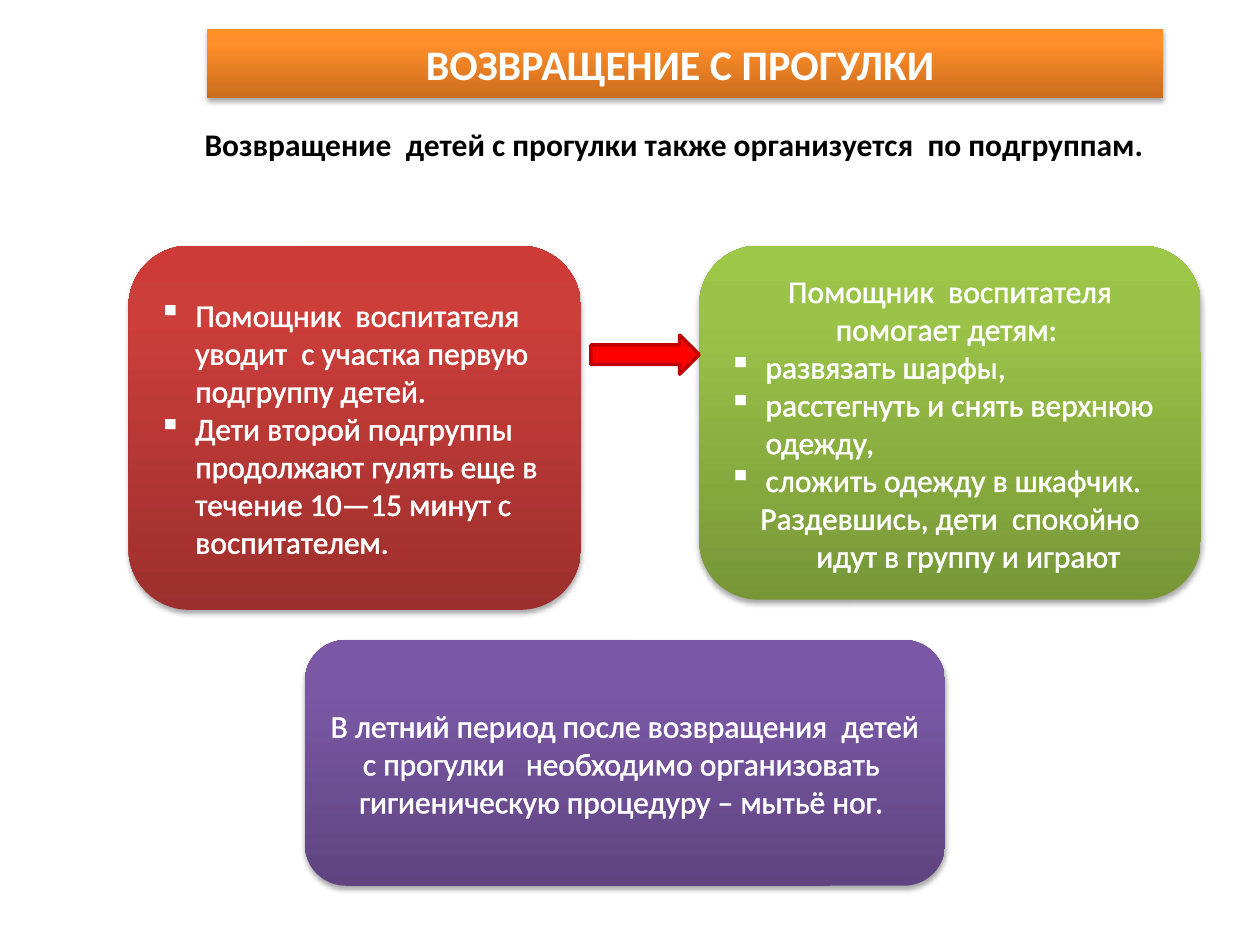
from copy import deepcopy
from dataclasses import dataclass

from lxml.etree import SubElement
from pptx import Presentation
from pptx.dml.color import RGBColor
from pptx.enum.shapes import MSO_SHAPE as Shape
from pptx.enum.text import MSO_ANCHOR as Anchor, MSO_AUTO_SIZE as AutoSize, PP_ALIGN as Align
from pptx.oxml.ns import qn
from pptx.util import Inches, Pt

COLS, ROWS = 100, 75


@dataclass(frozen=True)
class Theme:
    font: str = "Calibri"
    title_size: int = 24
    text_size: int = 18
    light: str = "FFFFFF"
    dark: str = "000000"
    orange: tuple = ("CB6C1D", "FF8F2A", "FF8F26")
    red: tuple = ("9C2F2D", "CB3E3A", "CE3B37")
    green: tuple = ("779737", "9BC348", "9DC746")
    purple: tuple = ("5F4480", "7B58A6", "7C57A8")
    arrow_fill: str = "FF0000"
    arrow_line: str = "C00000"


THEME = Theme()


def rgb(value):
    return RGBColor.from_string(value)


def write(p, text, *, size=THEME.text_size, color=THEME.light, bold=False,
          align=Align.LEFT, indent=0, hanging=0, bullet=None, outline=False):
    p.alignment = align
    pPr = p._p.get_or_add_pPr()
    pPr.set("marL", str(Inches(indent)))
    pPr.set("indent", str(Inches(-hanging)))
    if bullet:
        SubElement(pPr, qn("a:buChar")).set("char", bullet)
    r = p.add_run()
    r.text = text
    r.font.name, r.font.size, r.font.bold = THEME.font, Pt(size), bold
    r.font.color.rgb = rgb(color)
    if outline:
        rPr = r.font._element
        ln = SubElement(rPr, qn("a:ln"), w=str(Pt(0.75)))
        fill = SubElement(ln, qn("a:solidFill"))
        SubElement(fill, qn("a:srgbClr"), val=color)
        rPr.insert(0, ln)


class SlideBuilder:
    def __init__(self, prs, theme):
        self.theme = theme
        self.width, self.height = prs.slide_width, prs.slide_height
        self.s = prs.slides.add_slide(prs.slide_layouts[5])

    def box(self, col, row, cols, rows):
        dx, dy = self.width / COLS, self.height / ROWS
        return [round(v) for v in (col * dx, row * dy, cols * dx, rows * dy)]

    def paint(self, sp, colors):
        sp.fill.gradient()
        stops = sp._element.spPr.find(qn("a:gradFill")).find(qn("a:gsLst"))
        stops.append(deepcopy(stops[-1]))
        for stop, position, color in zip(sp.fill.gradient_stops, (0, 0.8, 1), colors):
            stop.position = position
            stop.color.rgb = rgb(color)
        sp.fill.gradient_angle = 90
        sp.line.fill.background()
        sp.shadow.inherit = False
        effects = sp._element.spPr.find(qn("a:effectLst"))
        shadow = SubElement(effects, qn("a:outerShdw"), blurRad=str(Pt(3.1)),
                            dist=str(Pt(1.8)), dir="5400000", rotWithShape="0")
        color = SubElement(shadow, qn("a:srgbClr"), val=self.theme.dark)
        SubElement(color, qn("a:alpha"), val="35000")

    def title(self, place, text):
        sp = self.s.shapes.title
        sp.left, sp.top, sp.width, sp.height = self.box(*place)
        self.paint(sp, self.theme.orange)
        sp.text_frame.vertical_anchor = Anchor.MIDDLE
        write(sp.text_frame.paragraphs[0], text, size=self.theme.title_size,
              bold=True, align=Align.CENTER)

    def caption(self, place, text):
        tf = self.s.shapes.add_textbox(*self.box(*place)).text_frame
        tf.word_wrap = True
        tf.auto_size = AutoSize.SHAPE_TO_FIT_TEXT
        write(tf.paragraphs[0], text, color=self.theme.dark, bold=True,
              align=Align.CENTER, indent=1)

    def card(self, place, colors, paragraphs):
        sp = self.s.shapes.add_shape(Shape.ROUNDED_RECTANGLE, *self.box(*place))
        self.paint(sp, colors)
        tf = sp.text_frame
        tf.word_wrap = True
        tf.vertical_anchor = Anchor.MIDDLE
        for i, (text, style) in enumerate(paragraphs):
            p = tf.add_paragraph() if i else tf.paragraphs[0]
            write(p, text, outline=True, **style)

    def arrow(self, place):
        sp = self.s.shapes.add_shape(Shape.RIGHT_ARROW, *self.box(*place))
        sp.fill.solid()
        sp.fill.fore_color.rgb = rgb(self.theme.arrow_fill)
        sp.line.color.rgb = rgb(self.theme.arrow_line)
        sp.line.width = Pt(2)
        sp.shadow.inherit = False


def main():
    prs = Presentation()
    prs.slide_width, prs.slide_height = Inches(10), Inches(7.5)
    slide = SlideBuilder(prs, THEME)
    hang = dict(indent=0.29, hanging=0.29)
    item = dict(hang, bullet="▪")
    center = dict(align=Align.CENTER)

    slide.title((16.4, 2.3, 75.9, 5.5), "ВОЗВРАЩЕНИЕ С ПРОГУЛКИ ")
    slide.card((10.2, 19.5, 35.9, 28.9), THEME.red, [
        ("Помощник  воспитателя уводит  с участка первую подгруппу детей.", item),
        ("Дети второй подгруппы продолжают гулять еще в течение 10—15 минут с воспитателем.", item),
    ])
    slide.card((55.5, 19.5, 39.8, 28.1), THEME.green, [
        ("Помощник  воспитателя помогает детям: ", center),
        ("развязать шарфы,", item),
        ("расстегнуть и снять верхнюю  одежду,", item),
        ("сложить одежду в шкафчик.", item),
        ("Раздевшись, дети  спокойно идут в группу и играют", hang | center),
    ])
    slide.card((24.2, 50.8, 50.8, 19.5), THEME.purple, [
        ("В летний период после возвращения  детей с прогулки   необходимо организовать  "
         "гигиеническую процедуру – мытьё ног. ", center),
    ])
    slide.arrow((46.9, 26.6, 8.6, 3.1))
    slide.caption((3.1, 9.4, 91.4, 4),
                  "Возвращение  детей с прогулки также организуется  по подгруппам. ")
    prs.save("out.pptx")


if __name__ == "__main__":
    main()
